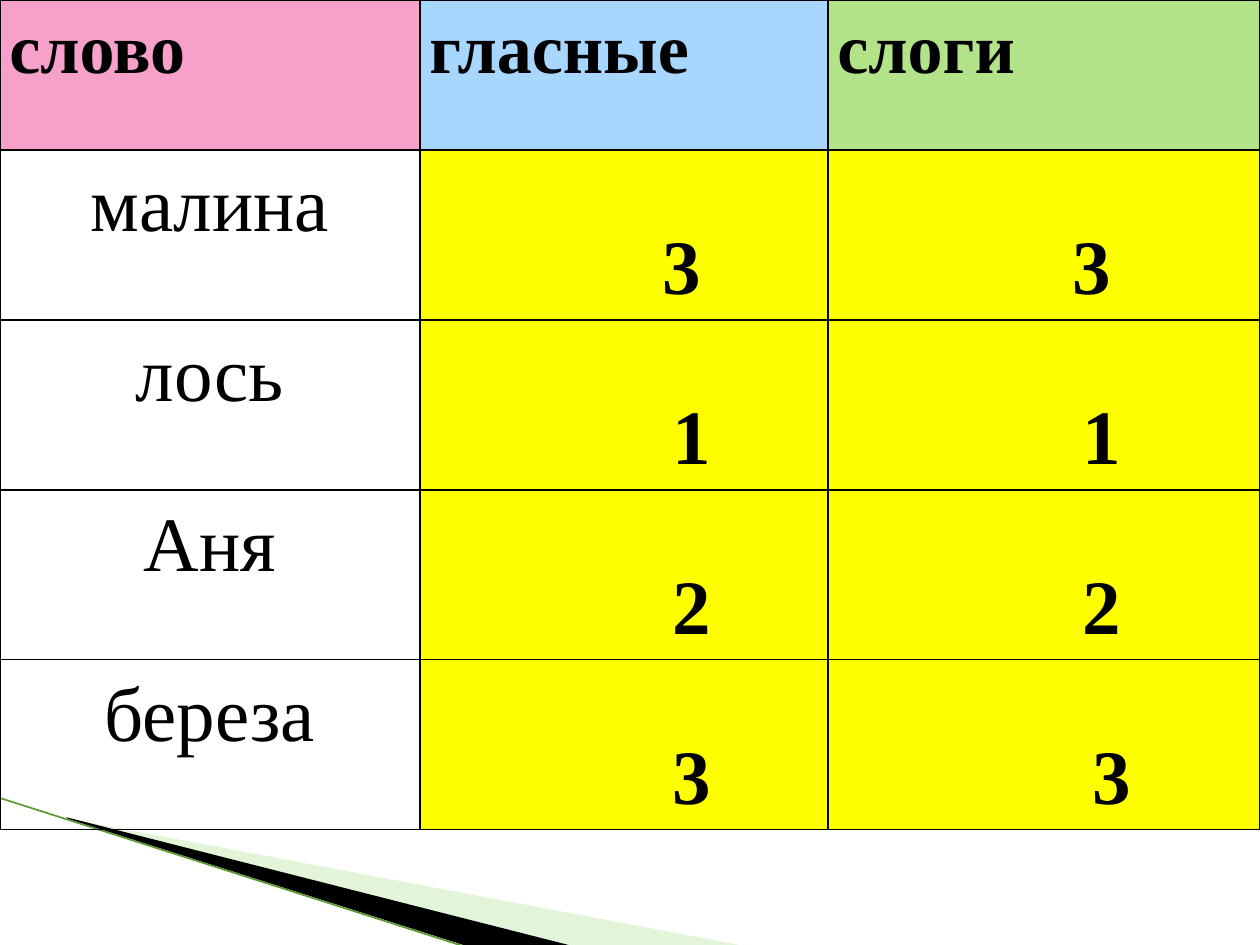
from pptx import Presentation
from pptx.dml.color import RGBColor
from pptx.enum.shapes import MSO_CONNECTOR
from pptx.enum.text import PP_ALIGN
from pptx.oxml.ns import qn
from pptx.util import Pt
from lxml.etree import SubElement

THEME = dict(
    font="Times New Roman", text="000000", border="000000", answer="FFFF00",
    beam="B8E7A1", beam_alpha=40, wedge="000000", edge="5B9A2E",
    header_size=40, body_size=44,
)
HEADERS = [("слово", "F7A1CA"), ("гласные", "A7D6FF"), ("слоги", "B2E389")]
# word, then (count, shift of the count in points) for vowels and syllables
ROWS = [
    ("малина", (3, 66), (3, 55)),
    ("лось", (1, 77), (1, 66)),
    ("Аня", (2, 77), (2, 66)),
    ("береза", (3, 77), (3, 77)),
]
COLS = [240, 233.2, 246.8]
HEADER_H, ROW_H = 85.7, 97.1
MARGIN, ANSWER_DROP = 5.4, 36
BEAM = [(39.6, 468.5), (428.4, 540.7), (328.3, 540.7), (39.6, 468)]
WEDGE = [(38.2, 467.3), (329, 540.7), (267.8, 541.4), (38.9, 468)]
EDGE = [(-0.7, 455.8), (267.1, 541.4)]


def color(name):
    return RGBColor.from_string(THEME.get(name, name))


def add_polygon(shapes, points, fill, alpha=None):
    builder = shapes.build_freeform(*points[0], scale=Pt(1))
    builder.add_line_segments(points[1:], close=True)
    sp = builder.convert_to_shape()
    sp.shadow.inherit = False
    sp.fill.solid()
    sp.fill.fore_color.rgb = color(fill)
    sp.line.fill.background()
    if alpha:
        clr = sp._element.spPr.find(".//" + qn("a:srgbClr"))
        SubElement(clr, qn("a:alpha"), val=str(alpha * 1000))


def add_edge(shapes):
    (x1, y1), (x2, y2) = EDGE
    line = shapes.add_connector(MSO_CONNECTOR.STRAIGHT, Pt(x1), Pt(y1), Pt(x2), Pt(y2))
    line.line.color.rgb = color("edge")
    line.line.width = Pt(0.95)
    SubElement(line._element.spPr, qn("a:effectLst"))


def set_borders(cell):
    """Draw the four sides; they must precede the fill in the cell's XML."""
    tcPr = cell._tc.get_or_add_tcPr()
    for side in ("lnL", "lnR", "lnT", "lnB"):
        ln = SubElement(tcPr, qn("a:" + side), w=str(Pt(1)))
        SubElement(SubElement(ln, qn("a:solidFill")), qn("a:srgbClr"), val=THEME["border"])


def fill_cell(cell, text, size, bold, fill=None, align=PP_ALIGN.CENTER, shift=0, drop=0):
    set_borders(cell)
    if fill:
        cell.fill.solid()
        cell.fill.fore_color.rgb = color(fill)
    else:
        cell.fill.background()
    cell.margin_left, cell.margin_right = Pt(MARGIN + shift), Pt(MARGIN)
    cell.margin_top, cell.margin_bottom = Pt(drop), 0
    p = cell.text_frame.paragraphs[0]
    p.text = str(text)
    p.alignment = align
    p.line_spacing = 1.15
    font = p.runs[0].font
    font.name, font.size, font.bold = THEME["font"], Pt(THEME[size]), bold
    font.color.rgb = color("text")


def add_word_table(shapes):
    heights = [HEADER_H] + [ROW_H] * len(ROWS)
    table = shapes.add_table(len(heights), len(COLS), 0, 0,
                             Pt(sum(COLS)), Pt(sum(heights))).table
    table.first_row = table.horz_banding = False
    for col, width in zip(table.columns, COLS):
        col.width = Pt(width)
    for row, height in zip(table.rows, heights):
        row.height = Pt(height)
    for c, (text, fill) in enumerate(HEADERS):
        fill_cell(table.cell(0, c), text, "header_size", True, fill, PP_ALIGN.LEFT)
    for r, (word, *counts) in enumerate(ROWS, 1):
        fill_cell(table.cell(r, 0), word, "body_size", False)
        for c, (count, shift) in enumerate(counts, 1):
            fill_cell(table.cell(r, c), count, "body_size", True, "answer",
                      shift=shift, drop=ANSWER_DROP)


prs = Presentation()
prs.slide_width, prs.slide_height = Pt(720), Pt(540)
slide = prs.slides.add_slide(prs.slide_layouts[6])
add_polygon(slide.shapes, BEAM, "beam", THEME["beam_alpha"])
add_polygon(slide.shapes, WEDGE, "wedge")
add_edge(slide.shapes)
add_word_table(slide.shapes)
prs.save("out.pptx")
